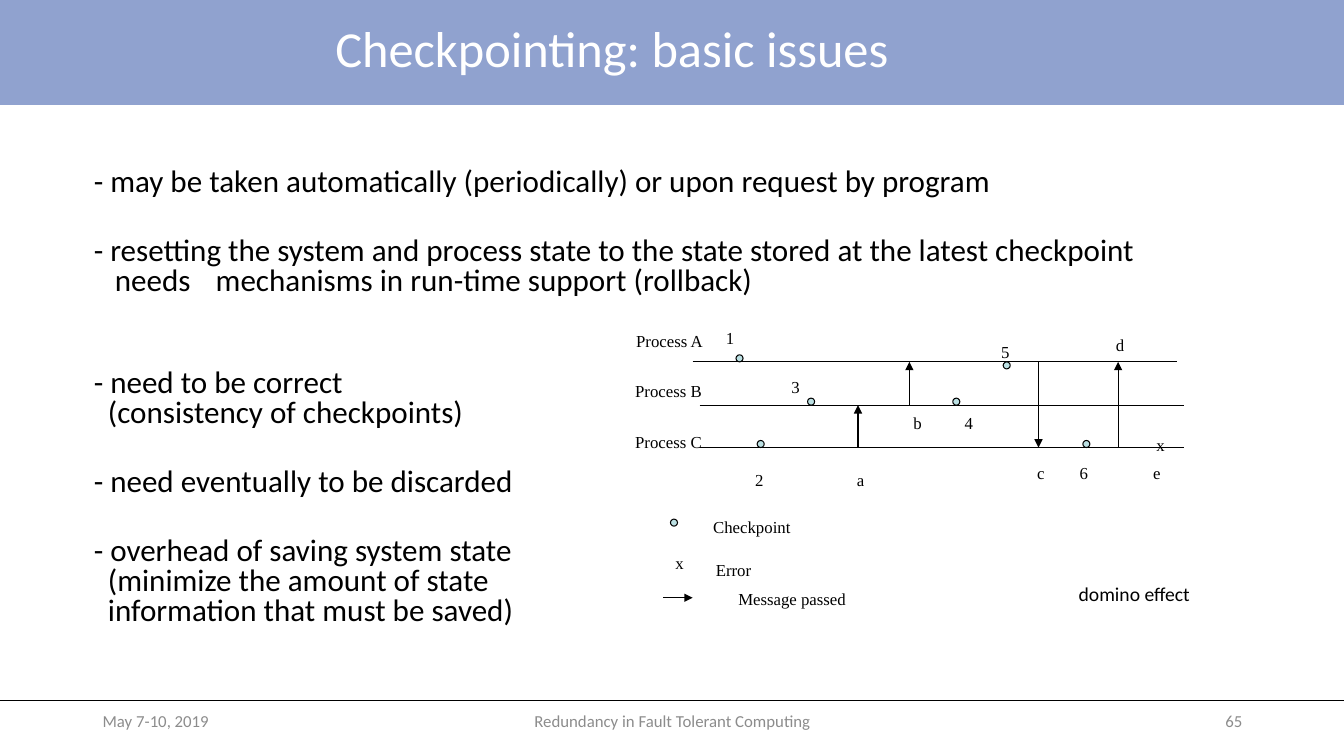
from lxml import etree
from pptx import Presentation
from pptx.dml.color import RGBColor
from pptx.enum.shapes import MSO_CONNECTOR, MSO_SHAPE
from pptx.enum.text import MSO_ANCHOR, MSO_AUTO_SIZE, PP_ALIGN
from pptx.oxml.ns import qn
from pptx.util import Pt

PX = 9144  # 100 px to the inch
LINE = MSO_CONNECTOR.STRAIGHT
RECT, OVAL = MSO_SHAPE.RECTANGLE, MSO_SHAPE.OVAL
LEFT, MID, RIGHT = PP_ALIGN.LEFT, PP_ALIGN.CENTER, PP_ALIGN.RIGHT
TOP, CENTER = MSO_ANCHOR.TOP, MSO_ANCHOR.MIDDLE
NOFIT = MSO_AUTO_SIZE.NONE

BLACK = RGBColor(0x00, 0x00, 0x00)
WHITE = RGBColor(0xFF, 0xFF, 0xFF)
GRAY = RGBColor(0x8C, 0x8C, 0x8C)
BLUE = RGBColor(0x90, 0xA2, 0xCF)
AQUA = RGBColor(0xBB, 0xE0, 0xE3)
SANS, SERIF = "Calibri", "Times New Roman"

deck = Presentation()
deck.slide_width, deck.slide_height = 1333 * PX, 750 * PX
slide = deck.slides.add_slide(deck.slide_layouts[1])
shapes = slide.shapes


def add_line(x1, y1, x2, y2, width=0.75, arrow=False):
    line = shapes.add_connector(LINE, x1 * PX, y1 * PX, x2 * PX, y2 * PX)
    line.line.color.rgb = BLACK
    line.line.width = Pt(width)
    if arrow:
        etree.SubElement(line.line._get_or_add_ln(), qn("a:tailEnd"), type="triangle")
    etree.SubElement(line.element.spPr, qn("a:effectLst"))


def add_text(text, x, y, w, h, align, anchor, size, face, color):
    box = shapes.add_textbox(x * PX, y * PX, w * PX, h * PX)
    frame = box.text_frame
    frame.word_wrap = False
    frame.vertical_anchor = anchor
    par = frame.paragraphs[0]
    par.text, par.alignment = text, align
    form = {"size": Pt(size), "name": face}
    for key, value in form.items():
        setattr(par.font, key, value)
    par.font.color.rgb = color


# Header bar, behind the title
bar = shapes.add_shape(RECT, 0, 0, 1333 * PX, 104 * PX)
bar.shadow.inherit = False
bar.fill.solid()
bar.fill.fore_color.rgb = BLUE
bar.line.fill.background()
shapes.element.insert(2, bar.element)

# Title and body
title, body = slide.placeholders
areas = (
    (title, 0, 0, 1214, 102, CENTER),
    (body, 83, 162, 1150, 520, TOP),
)
for holder, x, y, w, h, anchor in areas:
    holder.left, holder.top = x * PX, y * PX
    holder.width, holder.height = w * PX, h * PX
    holder.text_frame.auto_size = NOFIT
    holder.text_frame.vertical_anchor = anchor

head = title.text_frame.paragraphs[0]
head.text = "Checkpointing: basic issues"
head.alignment, head.line_spacing = MID, 0.9
head.font.size, head.font.name = Pt(36), SANS
head.font.color.rgb = WHITE

# Text, hanging indent in px, space before in points
points = (
    ("- may be taken automatically (periodically) or upon request by program", 14, 0),
    ("- resetting the system and process state to the state stored at the latest "
     "checkpoint\vneeds\tmechanisms in run-time support (rollback)", 21, 28),
    ("- need to be correct\v(consistency of checkpoints)", 14, 52),
    ("- need eventually to be discarded", 14, 28),
    ("- overhead of saving system state\v(minimize the amount of state\v"
     "information that must be saved)", 14, 28),
)
for i, (text, hang, gap) in enumerate(points):
    frame = body.text_frame
    par = frame.paragraphs[0] if i == 0 else frame.add_paragraph()
    par.text = text
    par.alignment, par.line_spacing = LEFT, 0.8
    par.space_before, par.space_after = Pt(gap), Pt(0)
    props = par._p.get_or_add_pPr()
    props.set("marL", str(hang * PX))
    props.set("indent", str(-hang * PX))
    etree.SubElement(props, qn("a:buNone"))
    if "\t" in text:
        tabs = etree.SubElement(props, qn("a:tabLst"))
        etree.SubElement(tabs, qn("a:tab"), pos=str(125 * PX), algn="l")
    par.font.size, par.font.name = Pt(22.2), SANS
    par.font.color.rgb = BLACK

# Footer
add_line(0, 695, 1333, 695, 0.5)
for text, x, w, align in (
    ("May 7-10, 2019", 92, 300, LEFT),
    ("Redundancy in Fault Tolerant Computing", 442, 450, MID),
    ("65", 942, 300, RIGHT),
):
    add_text(text, x, 695, w, 40, align, CENTER, 12, SANS, GRAY)

# Process lines
ROW_A, ROW_B, ROW_C = 359, 402, 444
for x, y in ((687, ROW_A), (694, ROW_B), (694, ROW_C)):
    add_line(x, y, x + 480, y)

# Messages, with the legend arrow last
for x1, y1, x2, y2 in (
    (851, ROW_C, 851, ROW_B),
    (902, ROW_B, 902, ROW_A),
    (1030, ROW_A, 1030, ROW_C),
    (1109, ROW_C, 1109, ROW_A),
    (658, 593, 687, 593),
):
    add_line(x1, y1, x2, y2, arrow=True)

# Checkpoints, with the legend dot last
for x, y in ((730, 352), (751, 437), (801, 395), (945, 395),
             (995, 359), (1074, 437), (665, 515)):
    dot = shapes.add_shape(OVAL, x * PX, y * PX, 7 * PX, 7 * PX)
    dot.shadow.inherit = False
    dot.fill.solid()
    dot.fill.fore_color.rgb = AQUA
    dot.line.color.rgb = BLACK
    dot.line.width = Pt(0.75)

# Labels: text, left, top, width
labels = (
    ("Process A", 620, 323, 87), ("Process B", 619, 373, 87),
    ("Process C", 619, 423, 87),
    ("1", 709, 320, 29), ("2", 738, 461, 29), ("3", 774, 369, 29),
    ("4", 946, 405, 29), ("5", 982, 334, 29), ("6", 1060, 454, 29),
    ("a", 839, 461, 28), ("b", 895, 405, 29), ("c", 1018, 454, 28),
    ("d", 1096, 327, 29), ("e", 1133, 454, 28), ("x", 1136, 426, 29),
    ("Checkpoint", 695, 508, 99), ("x", 658, 543, 30),
    ("Error", 699, 550, 56), ("Message passed", 701, 579, 148),
)
for text, x, y, w in labels:
    add_text(text, x, y, w, 32, RIGHT, TOP, 12, SERIF, BLACK)

add_text("domino effect", 1060, 572, 136, 33, LEFT, TOP, 14, SANS, BLACK)

deck.save("out.pptx")
